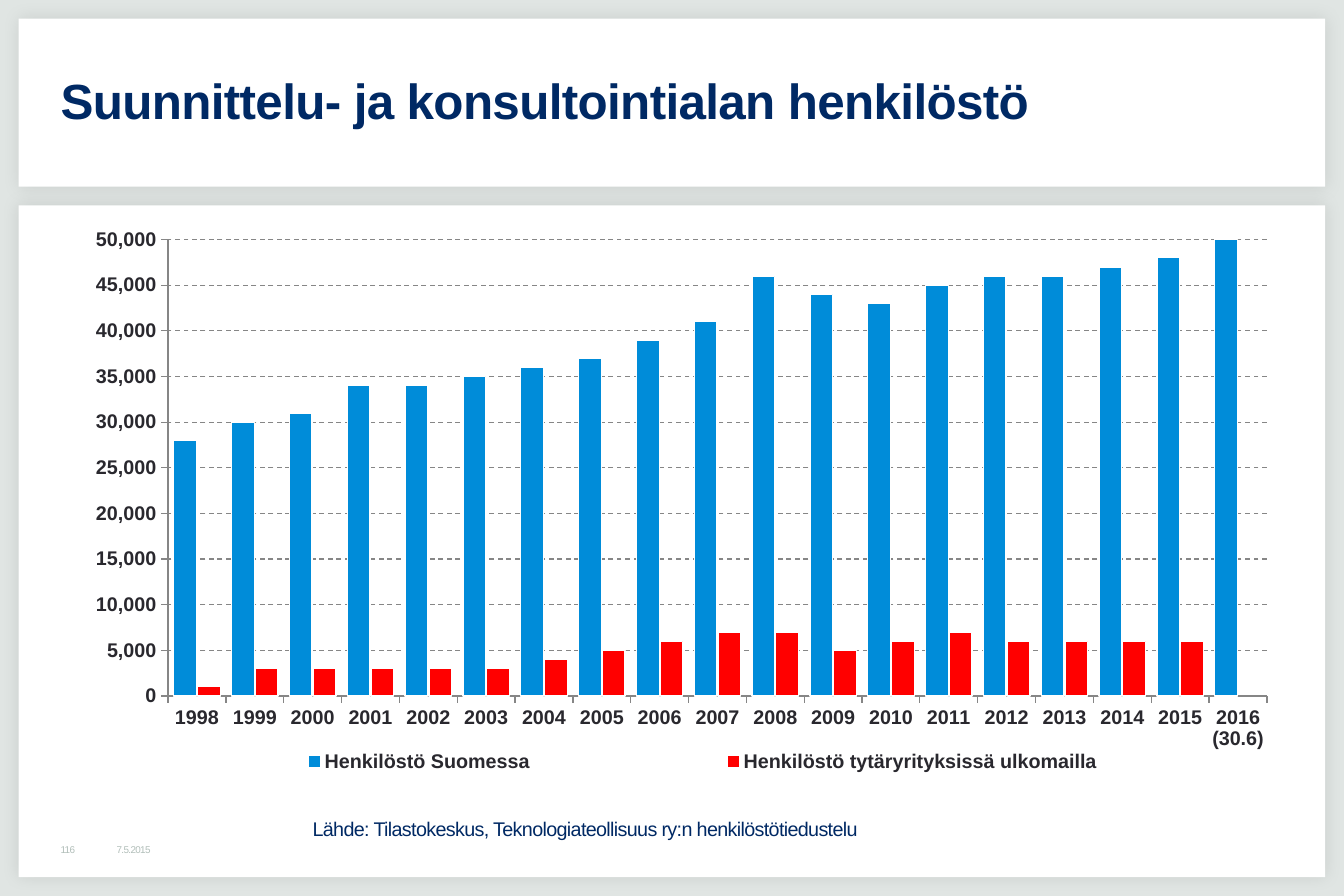
from lxml import etree
from pptx import Presentation
from pptx import util as u
from pptx.chart.data import CategoryChartData
from pptx.dml.color import RGBColor
from pptx.enum import chart as charts, dml, shapes, text
from pptx.oxml import parse_xml
from pptx.oxml.ns import nsdecls, qn

FONT = "Arial"
NAVY, INK, PALE, AXIS = "002964", "29282E", "B1BEB9", "868686"
YEARS = [str(year) for year in range(1998, 2016)] + ["2016 (30.6)"]
STAFF = [
    ("Henkilöstö Suomessa", "008CD9",
     [28000, 30000, 31000, 34000, 34000, 35000, 36000, 37000, 39000, 41000,
      46000, 44000, 43000, 45000, 46000, 46000, 47000, 48000, 50000]),
    ("Henkilöstö tytäryrityksissä ulkomailla", "FF0000",
     [1000, 3000, 3000, 3000, 3000, 3000, 4000, 5000, 6000, 7000,
      7000, 5000, 6000, 7000, 6000, 6000, 6000, 6000, None]),
]


def color(hex_value):
    return RGBColor.from_string(hex_value)


def cm_box(left, top, width, height):
    return [u.Cm(length) for length in (left, top, width, height)]


def add_panel(slide, box):
    """White card with a soft halo."""
    panel = slide.shapes.add_shape(shapes.MSO_SHAPE.RECTANGLE, *box)
    panel.shadow.inherit = False
    panel.fill.solid()
    panel.fill.fore_color.rgb = color("FFFFFF")
    panel.line.fill.background()
    effects = panel.fill._xPr.find(qn("a:effectLst"))
    effects.append(parse_xml(
        f'<a:outerShdw {nsdecls("a")} blurRad="{u.Pt(10)}" dist="0" dir="2700000">'
        '<a:srgbClr val="000000"><a:alpha val="10000"/></a:srgbClr></a:outerShdw>'))


def add_label(slide, box, wording, size, hex_value, bold=False,
              anchor=text.MSO_ANCHOR.MIDDLE, insets=(0.1, 0.1, 0.1, 0.1)):
    frame = slide.shapes.add_textbox(*box).text_frame
    frame.word_wrap = True
    frame.vertical_anchor = anchor
    (frame.margin_left, frame.margin_top,
     frame.margin_right, frame.margin_bottom) = cm_box(*insets)
    frame.text = wording
    paragraph = frame.paragraphs[0]
    font = paragraph.runs[0].font
    font.name, font.size, font.bold = FONT, u.Pt(size), bold
    font.color.rgb = color(hex_value)
    font._element.set("spc", "-40")
    return paragraph


def manual_layout(x, y, w, h, inner=False):
    """Chart layout element with a place given in fractions of the chart."""
    layout = parse_xml(f'<c:layout {nsdecls("c")}><c:manualLayout/></c:layout>')
    settings = [("layoutTarget", "inner")] if inner else []
    settings += [("xMode", "edge"), ("yMode", "edge"),
                 ("x", x), ("y", y), ("w", w), ("h", h)]
    for tag, value in settings:
        etree.SubElement(layout[0], qn(f"c:{tag}")).set("val", str(value))
    return layout


def style_axis(axis):
    axis.major_tick_mark = charts.XL_TICK_MARK.OUTSIDE
    axis.minor_tick_mark = charts.XL_TICK_MARK.NONE
    axis.format.line.color.rgb = color(AXIS)
    axis.format.line.width = u.Pt(0.75)
    style_chart_font(axis.tick_labels.font)


def style_chart_font(font):
    font.name, font.size, font.bold = FONT, u.Pt(12), True
    font.color.rgb = color(INK)


def add_staff_chart(slide, box):
    data = CategoryChartData(number_format="#,##0")
    data.categories = YEARS
    for name, _, values in STAFF:
        data.add_series(name, values)
    chart = slide.shapes.add_chart(
        charts.XL_CHART_TYPE.COLUMN_CLUSTERED, *box, data).chart
    chart.has_title = False
    style_chart_font(chart.font)

    columns = chart.plots[0]
    columns.gap_width, columns.overlap = 50, -5
    columns.vary_by_categories = False
    for series, (_, fill, _) in zip(columns.series, STAFF):
        series.format.fill.solid()
        series.format.fill.fore_color.rgb = color(fill)
        series.format.line.color.rgb = color("FFFFFF")
        series.format.line.width = u.Pt(0.75)

    style_axis(chart.category_axis)
    people = chart.value_axis
    style_axis(people)
    people.minimum_scale, people.maximum_scale, people.major_unit = 0, 50000, 5000
    people.tick_labels.number_format = "#,##0"
    people.tick_labels.number_format_is_linked = False
    people.has_major_gridlines = True
    grid = people.major_gridlines.format.line
    grid.color.rgb = color(AXIS)
    grid.width = u.Pt(0.75)
    grid.dash_style = dml.MSO_LINE.DASH

    chart.has_legend = True
    legend = chart.legend
    legend.position = charts.XL_LEGEND_POSITION.BOTTOM
    legend.include_in_layout = False
    style_chart_font(legend.font)

    plot_area = chart._chartSpace.chart.plotArea
    for parent, position, layout in (
            (plot_area, 0, manual_layout(0.091, 0.028, 0.892, 0.815, inner=True)),
            (legend._element, 1, manual_layout(0.05, 0.93, 0.95, 0.06))):
        for default in parent.findall(qn("c:layout")):
            parent.remove(default)
        parent.insert(position, layout)


def add_header(slide, left, top, width, height):
    add_panel(slide, cm_box(left, top, width, height))
    title = add_label(
        slide, cm_box(left + 0.8, top + 0.4, width - 1.6, height - 0.8),
        "Suunnittelu- ja konsultointialan henkilöstö", 30, NAVY, bold=True,
        insets=(0.1, 0.13, 0.25, 0.13))
    title.line_spacing = 0.95


def add_body(slide, left, top, width, height):
    add_panel(slide, cm_box(left, top, width, height))
    add_staff_chart(slide, cm_box(left + 0.8, top + 0.4, width - 1.6, 12))
    add_label(slide, cm_box(left + 6.2, top + 13, 14.4, 0.7),
              "Lähde: Tilastokeskus, Teknologiateollisuus ry:n henkilöstötiedustelu",
              12, NAVY, anchor=text.MSO_ANCHOR.TOP)
    footer_top = top + height - 0.8
    add_label(slide, cm_box(left + 0.8, footer_top, 1.2, 0.4), "116", 6, PALE)
    add_label(slide, cm_box(left + 2, footer_top, 3.6, 0.4), "7.5.2015", 6, PALE)


def main():
    deck = Presentation()
    deck.slide_width, deck.slide_height = u.Cm(28.8), u.Cm(19.2)
    slide = deck.slides.add_slide(deck.slide_layouts[6])
    slide.background.fill.solid()
    slide.background.fill.fore_color.rgb = color("E0E5E3")
    margin, header_height = 0.4, 3.6
    width = 28.8 - 2 * margin
    body_top = header_height + 2 * margin
    add_header(slide, margin, margin, width, header_height)
    add_body(slide, margin, body_top, width, 19.2 - margin - body_top)
    deck.save("out.pptx")


if __name__ == "__main__":
    main()
